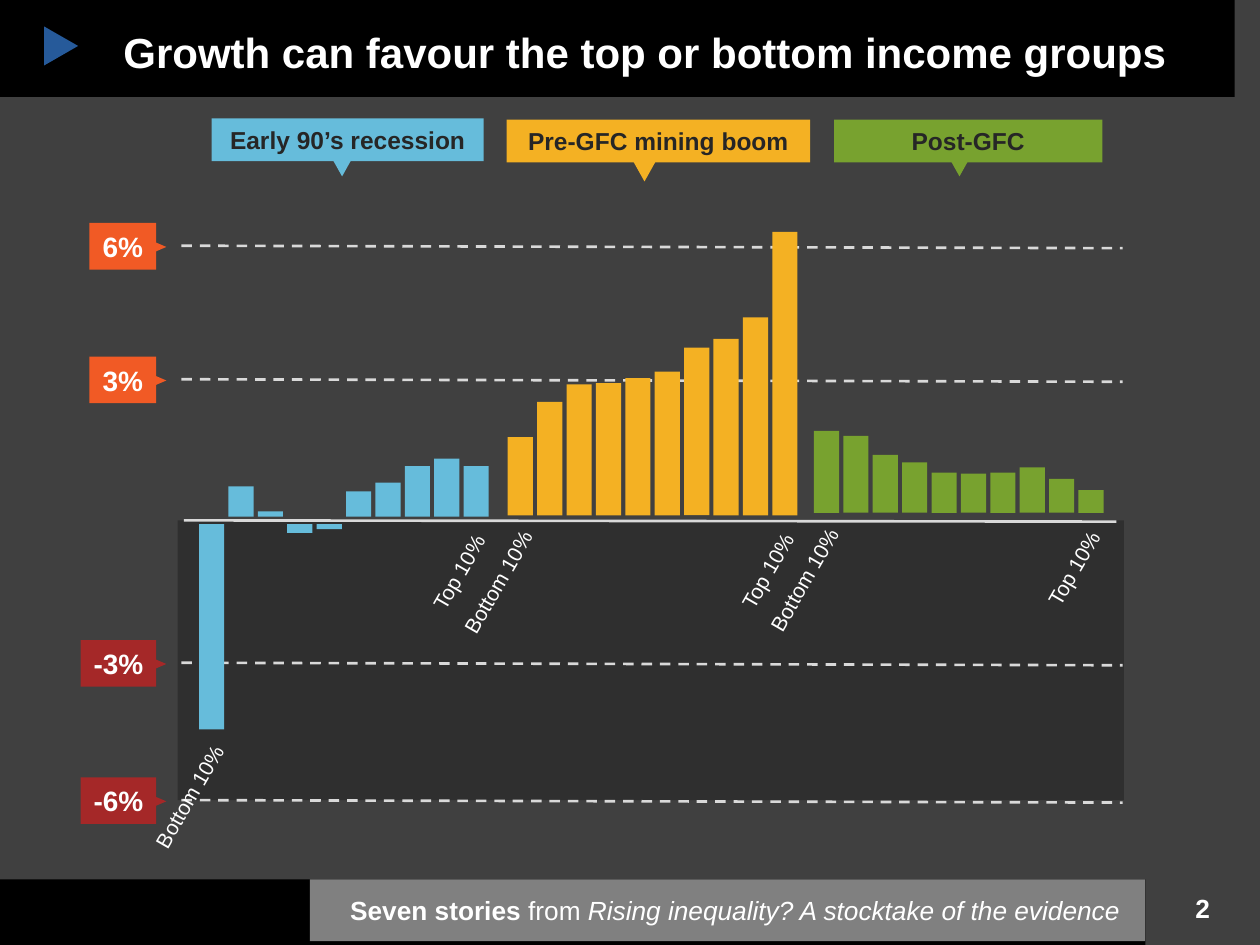
from dataclasses import dataclass

from lxml.etree import SubElement
from pptx import Presentation
from pptx.dml.color import RGBColor as RGB
from pptx.enum.dml import MSO_LINE_DASH_STYLE as DASH
from pptx.enum.shapes import MSO_CONNECTOR as CONN, MSO_SHAPE as SHAPE
from pptx.enum.text import MSO_ANCHOR as ANCHOR, PP_ALIGN as ALIGN
from pptx.oxml.ns import qn
from pptx.util import Inches, Pt


@dataclass(frozen=True)
class Theme:
    """Colours, font and type sizes of the slide."""
    font: str = "Arial"
    bg: str = "404040"
    black: str = "000000"
    white: str = "FFFFFF"
    dark: str = "262626"
    rule: str = "D9D9D9"
    grey: str = "808080"
    accent: str = "265A9A"
    recession: str = "66BCDB"
    boom: str = "F4B123"
    post: str = "78A22F"
    gain: str = "F15A25"
    loss: str = "A52828"
    title: int = 24
    tag: int = 16
    footer: int = 15
    callout: int = 14
    label: int = 12


T = Theme()
BAR_W, BAR_PITCH, LABEL_H = 0.2, 0.2333, 0.3

PERIODS = [
    dict(name="Early 90’s recession", color=T.recession, left=1.58, base=4.1,
         box=(1.68, 0.94, 2.16, 0.34), tip=(0.94, 0.29),
         heights=[-1.63, 0.24, 0.04, -0.07, -0.04, 0.2, 0.27, 0.4, 0.46, 0.4]),
    dict(name="Pre-GFC mining boom", color=T.boom, left=4.03, base=4.09,
         box=(4.02, 0.95, 2.41, 0.34), tip=(1.0, 0.32),
         heights=[0.62, 0.9, 1.04, 1.05, 1.09, 1.14, 1.33, 1.4, 1.57, 2.25]),
    dict(name="Post-GFC", color=T.post, left=6.46, base=4.07,
         box=(6.62, 0.95, 2.13, 0.34), tip=(0.9, 0.28),
         heights=[0.65, 0.61, 0.46, 0.4, 0.32, 0.31, 0.32, 0.36, 0.27, 0.18]),
]
GRIDLINES = [("6%", 0, 0.53, T.gain), ("3%", 1.06, 0.53, T.gain),
             ("-3%", 3.31, 0.6, T.loss), ("-6%", 4.4, 0.6, T.loss)]


def shape(shapes, kind, box, color, rotation=0):
    """Add a flat filled preset shape without an outline."""
    s = shapes.add_shape(kind, *map(Inches, box))
    s.shadow.inherit = False
    s.fill.solid()
    s.fill.fore_color.rgb = RGB.from_string(color)
    s.line.fill.background()
    s.rotation = rotation
    return s


def write(s, runs, size, color=T.white, align=ALIGN.CENTER, wrap=True, **frame):
    """Fill a shape with one paragraph of (text, format) runs."""
    tf = s.text_frame
    frame = dict(word_wrap=wrap, vertical_anchor=ANCHOR.MIDDLE) | frame
    for name, value in frame.items():
        setattr(tf, name, value)
    p = tf.paragraphs[0]
    p.alignment = align
    for text, fmt in runs:
        r = p.add_run()
        r.text = text
        r.font.color.rgb = RGB.from_string(color)
        for name, value in (dict(name=T.font, size=Pt(size)) | fmt).items():
            setattr(r.font, name, value)
    return p


def rule(slide, x1, y1, x2, y2, dash=None):
    """Draw a thin light line, dashed on request."""
    c = slide.shapes.add_connector(CONN.STRAIGHT, *map(Inches, (x1, y1, x2, y2)))
    c.line.color.rgb = RGB.from_string(T.rule)
    c.line.width = Pt(1.5)
    if dash:
        c.line.dash_style = dash
    SubElement(c._element.spPr, qn("a:effectLst"))


def header(slide, box):
    """Draw the title band with its triangular marker."""
    x, y, _, _ = box
    s = shape(slide.shapes, SHAPE.RECTANGLE, box, T.black)
    p = write(s, [("Growth can favour the top or bottom income groups", dict(bold=True))],
              T.title, align=ALIGN.LEFT, margin_left=Inches(0.98), margin_right=Inches(0.39),
              margin_top=Inches(0.16), margin_bottom=Inches(0.16))
    p.line_spacing = Pt(32)
    shape(slide.shapes, SHAPE.ISOSCELES_TRIANGLE, (x + 0.33, y + 0.23, 0.31, 0.27), T.accent, 90)


def callout(slide, box, name, color, tip):
    """Draw a period heading with a pointer hanging below it."""
    x, y, _, _ = box
    dx, dy = tip
    g = slide.shapes.add_group_shape()
    shape(g.shapes, SHAPE.ISOSCELES_TRIANGLE, (x + dx, y + dy, 0.19, 0.17), color, 180)
    s = shape(g.shapes, SHAPE.RECTANGLE, box, color)
    write(s, [(name, dict(bold=True))], T.callout, T.dark)


def axis_tag(slide, box, text, color):
    """Draw an axis value with a pointer on its right."""
    x, y, w, _ = box
    g = slide.shapes.add_group_shape()
    s = shape(g.shapes, SHAPE.RECTANGLE, box, color)
    write(s, [(text, dict(bold=True))], T.tag, wrap=False)
    shape(g.shapes, SHAPE.ISOSCELES_TRIANGLE, (x + w - 0.05, y + 0.12, 0.12, 0.14), color, 90)


def slanted_label(slide, cx, cy, text, width):
    """Write a group label rotated around its centre."""
    box = (cx - width / 2, cy - LABEL_H / 2, width, LABEL_H)
    s = slide.shapes.add_textbox(*map(Inches, box))
    s.rotation = 300
    write(s, [(text, {})], T.label, wrap=False)


def bars(slide, left, base, heights, color):
    """Draw one period's bars and name its first and last group."""
    for i, h in enumerate(heights):
        top = base - h if h > 0 else base + 0.06
        box = (left + i * BAR_PITCH, top, BAR_W, abs(h))
        shape(slide.shapes, SHAPE.RECTANGLE, box, color)
    foot = base if heights[0] > 0 else base + 0.06 - heights[0]
    last = left + (len(heights) - 1) * BAR_PITCH
    slanted_label(slide, left - 0.08, foot + 0.53, "Bottom 10%", 1.12)
    slanted_label(slide, last - 0.04, base + 0.44, "Top 10%", 0.85)


def growth_chart(slide, box):
    """Draw the shaded negative area, gridlines, axis tags and bars."""
    x, y, w, h = box
    zero = y + 2.18
    panel = shape(slide.shapes, SHAPE.RECTANGLE, (x - 0.03, zero, w + 0.04, y + h - zero), T.black)
    color = panel.fill._xPr.find(qn("a:solidFill"))[0]
    SubElement(color, qn("a:alpha"), val="25000")
    for text, dy, tag_w, tag_color in GRIDLINES:
        rule(slide, x, y + dy, x + w, y + dy + 0.02, DASH.DASH)
        axis_tag(slide, (x - 0.2 - tag_w, y + dy - 0.18, tag_w, 0.37), text, tag_color)
    for period in PERIODS:
        bars(slide, *(period[key] for key in ("left", "base", "heights", "color")))
    rule(slide, x + 0.02, zero, x + w - 0.05, zero + 0.01)


def footer(slide, box):
    """Draw the source band and the page number."""
    x, y, w, h = box
    band_w = 9.09
    shape(slide.shapes, SHAPE.RECTANGLE, (x, y, band_w, h), T.black)
    s = shape(slide.shapes, SHAPE.RECTANGLE, (x + 2.46, y, band_w - 2.46, 0.49), T.grey)
    runs = [("Seven stories ", dict(bold=True)), ("from ", {}),
            ("Rising inequality? A stocktake of the evidence", dict(italic=True))]
    write(s, runs, T.footer, align=ALIGN.RIGHT,
          margin_left=Inches(0.2), margin_right=Inches(0.2))
    number = (x + band_w, y - 0.03, w - band_w, h)
    s = slide.shapes.add_textbox(*map(Inches, number))
    write(s, [("2", dict(bold=True))], T.footer)


def main():
    """Build the one-slide deck."""
    prs = Presentation()
    prs.slide_width, prs.slide_height = Inches(10), Inches(7.5)
    slide = prs.slides.add_slide(prs.slide_layouts[6])
    slide.background.fill.solid()
    slide.background.fill.fore_color.rgb = RGB.from_string(T.bg)
    header(slide, (0, 0, 9.8, 0.77))
    growth_chart(slide, (1.44, 1.95, 7.47, 4.4))
    for period in PERIODS:
        callout(slide, *(period[key] for key in ("box", "name", "color", "tip")))
    footer(slide, (0, 6.98, 10, 0.52))
    prs.save("out.pptx")


if __name__ == "__main__":
    main()
